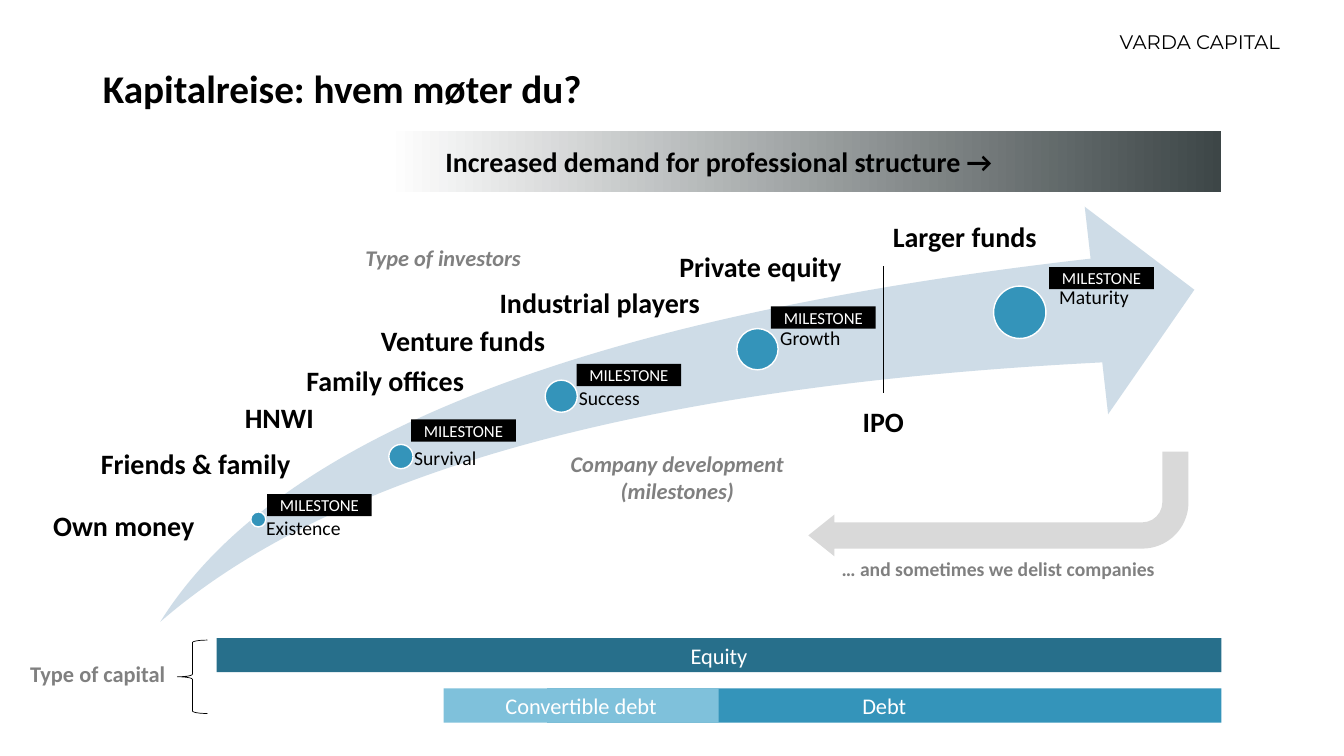
from pptx import Presentation
from pptx.dml.color import RGBColor
from pptx.enum.shapes import MSO_CONNECTOR, MSO_SHAPE
from pptx.enum.text import MSO_ANCHOR, PP_ALIGN
from pptx.oxml.ns import qn
from pptx.util import Cm, Pt
from lxml.etree import SubElement

COLOURS = {
    "black": "000000", "white": "FFFFFF", "slate": "3D4647", "swoosh": "CEDCE7",
    "blue": "3494BA", "deep": "276F8B", "light": "7FC1DB",
    "grey": "808080", "silver": "D9D9D9",
}

INVESTORS = [
    ("Friends & family", 2.29, 11.13, 6.53),
    ("Own money", 1.09, 12.7, 5.23),
    ("HNWI", 5.92, 9.96, 3.02),
    ("Family offices", 7.47, 9.04, 5.46),
    ("Venture funds", 9.35, 8.03, 5.46),
    ("Industrial players", 12.34, 7.06, 5.82),
    ("Private equity", 16.87, 6.15, 5.82),
    ("Larger funds", 22.25, 5.41, 5.82),
    ("IPO", 21.49, 10.06, 2.39),
]

MILESTONES = [
    ("Existence", (6.32, 12.9, 0.38), (6.5, 13.08, 2.18, 2.49), (6.73, 12.45)),
    ("Survival", (9.8, 11.2, 0.61), (10.11, 11.3, 2.77, 4.39), (10.36, 10.57)),
    ("Success", (13.74, 9.58, 0.81), (14.15, 9.8, 3.23, 5.87), (14.53, 9.17)),
    ("Growth", (18.57, 8.28, 1.04), (19.1, 8.28, 3.35, 7.01), (19.43, 7.72)),
    ("Maturity", (25.04, 7.21, 1.32), (25.98, 7.24, 3.35, 7.7), (26.44, 6.73)),
]

CAPITAL = [
    ("Equity", "deep", 5.46, 16.08, 25.32),
    ("Debt", "blue", 13.79, 17.35, 16.99),
    ("Convertible debt", "light", 11.18, 17.35, 6.93),
]

CAPTIONS = [
    (["Type of capital"], (0.51, 16.51, 5.82, 0.94), 16, PP_ALIGN.LEFT, False),
    (["Type of investors"], (8.81, 6.02, 4.72, 0.94), 16, PP_ALIGN.CENTER, True),
    (["Company development", "(milestones)"], (13.41, 11.23, 7.32, 1.63), 16, PP_ALIGN.CENTER, True),
    (["… and sometimes we delist companies"], (20.7, 13.92, 8.92, 0.86), 14, PP_ALIGN.CENTER, False),
]


class SlideBuilder:
    def __init__(self, slide, font):
        self.slide = slide
        self.font = font

    def colour(self, name):
        return RGBColor.from_string(COLOURS[name])

    def add_lines(self, frame, lines, size, colour="black", bold=False, italic=False,
                  align=PP_ALIGN.LEFT, spacing=None, font=None):
        frame.word_wrap = True
        for index, line in enumerate(lines):
            para = frame.add_paragraph() if index else frame.paragraphs[0]
            para.alignment = align
            para.line_spacing = spacing
            span = para.add_run()
            span.text = line
            span.font.name = font or self.font
            span.font.size = Pt(size)
            span.font.bold = bold
            span.font.italic = italic
            span.font.color.rgb = self.colour(colour)

    def title(self, text, place, size):
        box = self.slide.shapes.title
        box.left, box.top, box.width, box.height = map(Cm, place)
        box.text_frame.vertical_anchor = MSO_ANCHOR.MIDDLE
        self.add_lines(box.text_frame, [text], size, bold=True, spacing=0.9)

    def text(self, lines, place, size, inset=None, **style):
        frame = self.slide.shapes.add_textbox(*map(Cm, place)).text_frame
        if inset is not None:
            frame.margin_left = Cm(inset)
            frame.margin_top = frame.margin_right = frame.margin_bottom = 0
        self.add_lines(frame, lines, size, **style)

    def shape(self, kind, place, fill=None, line=None, width=1, adjust=()):
        shape = self.slide.shapes.add_shape(kind, *map(Cm, place))
        shape.shadow.inherit = False
        if fill:
            shape.fill.solid()
            shape.fill.fore_color.rgb = self.colour(fill)
        else:
            shape.fill.background()
        if line:
            shape.line.color.rgb = self.colour(line)
            shape.line.width = Pt(width)
        else:
            shape.line.fill.background()
        for index, value in enumerate(adjust):
            shape.adjustments[index] = value
        return shape

    def bar(self, text, place, size, fill=None, colour="white", bold=False):
        bar = self.shape(MSO_SHAPE.RECTANGLE, place, fill)
        bar.text_frame.vertical_anchor = MSO_ANCHOR.MIDDLE
        self.add_lines(bar.text_frame, [text], size, colour, bold, align=PP_ALIGN.CENTER)
        return bar

    def fade(self, shape, stops, angle):
        shape.fill.gradient()
        shape.fill.gradient_angle = angle
        for stop, (position, name) in zip(shape.fill.gradient_stops, stops):
            stop.position = position
            stop.color.rgb = self.colour(name)

    def line(self, start, end, colour, width):
        line = self.slide.shapes.add_connector(MSO_CONNECTOR.STRAIGHT, *map(Cm, start + end))
        line.line.color.rgb = self.colour(colour)
        line.line.width = Pt(width)
        SubElement(line._element.spPr, qn("a:effectLst"))


def main():
    deck = Presentation()
    deck.slide_width, deck.slide_height = Cm(33.87), Cm(19.05)
    page = SlideBuilder(deck.slides.add_slide(deck.slide_layouts[5]), "Calibri")

    page.text(["VARDA CAPITAL"], (24.89, 0.64, 7.62, 1.02), 14,
              align=PP_ALIGN.RIGHT, font="Montserrat")
    demand = page.bar("Increased demand for professional structure →",
                      (5.46, 3.3, 25.32, 1.55), 20, colour="black", bold=True)
    page.fade(demand, [(0, "slate"), (0.83, "white")], 180)
    page.title("Kapitalreise: hvem møter du?", (2.34, 1.4, 29.21, 1.78), 28)

    page.shape(MSO_SHAPE.SWOOSH_ARROW, (4.04, 5.21, 26.06, 10.46), "swoosh", adjust=(0.25, 0.25))
    for name, (left, top, size), label, _ in MILESTONES:
        page.shape(MSO_SHAPE.OVAL, (left, top, size, size), "blue", "white")
        page.text([name], label, 14, inset=size * 0.54, spacing=0.9)

    for name, fill, left, top, width in CAPITAL:
        page.bar(name, (left, top, width, 0.86), 16, fill)
    for name, left, top, width in INVESTORS:
        page.text([name], (left, top, width, 1.12), 20, bold=True)

    page.shape(MSO_SHAPE.LEFT_BRACE, (4.47, 16.13, 0.76, 1.85), line="black", width=0.5)
    delisting = page.shape(MSO_SHAPE.BENT_ARROW, (20.37, 11.38, 9.58, 2.64), "silver",
                           adjust=(0.25, 0.2, 0.25, 0.44))
    delisting.rotation = 180
    for lines, place, size, align, italic in CAPTIONS:
        page.text(lines, place, size, colour="grey", bold=True, italic=italic, align=align)

    page.line((22.25, 6.71), (22.25, 9.91), "black", 0.5)
    for *_, (left, top) in MILESTONES:
        page.bar("MILESTONE", (left, top, 2.64, 0.56), 12, "black")

    deck.save("out.pptx")


if __name__ == "__main__":
    main()
